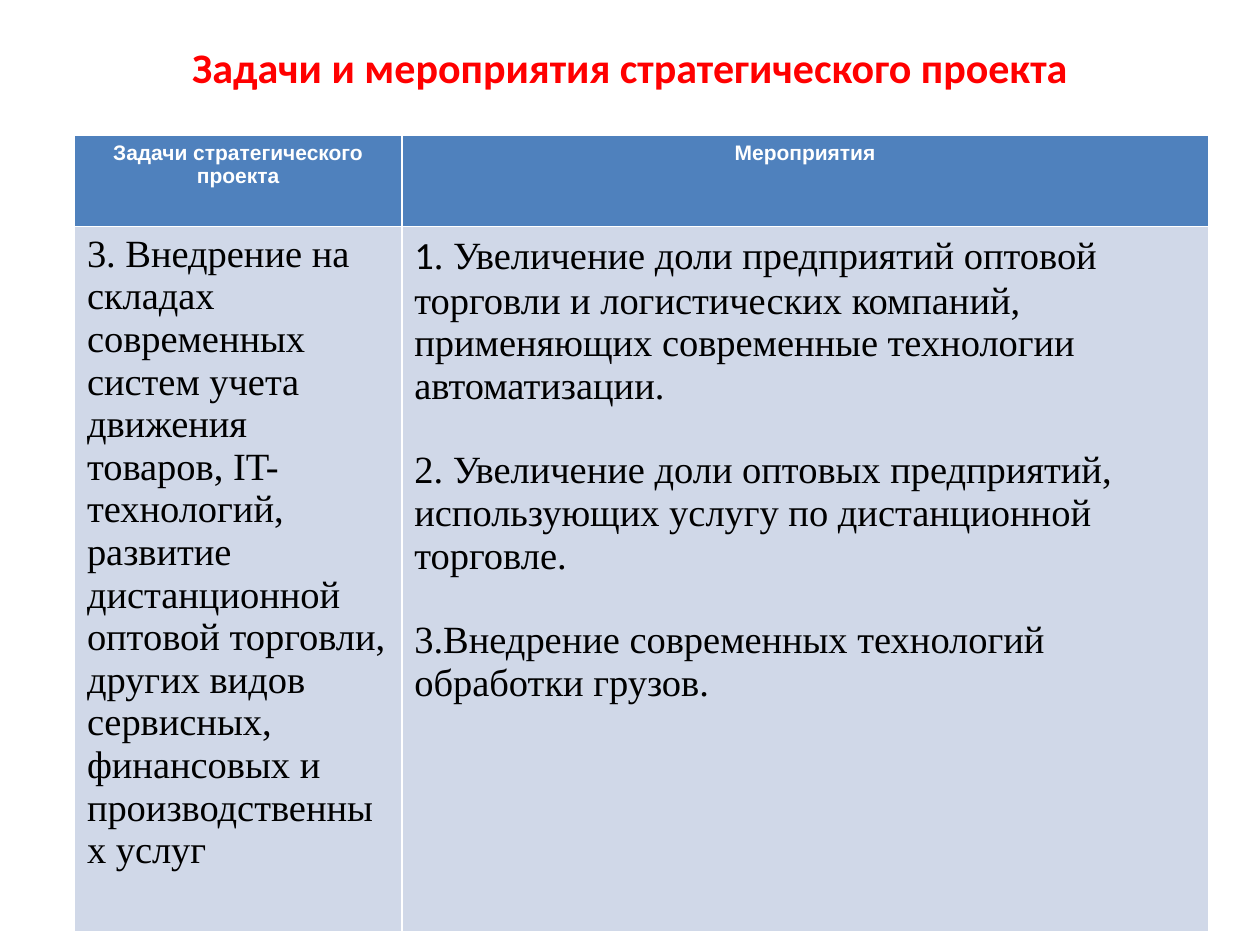
import pptx
import pptx.util
import pptx.dml.color
import pptx.enum.text

Cm = pptx.util.Cm
Pt = pptx.util.Pt
CENTER = pptx.enum.text.PP_ALIGN.CENTER
COLORS = {"title": "FF0000", "header": "4F81BD", "header_text": "FFFFFF",
          "body": "D0D8E8", "body_text": "000000"}


def rgb(name):
    return pptx.dml.color.RGBColor.from_string(COLORS[name])


def style(run, font, size, color, bold=False):
    run.font.name = font
    run.font.size = Pt(size)
    run.font.bold = bold
    run.font.color.rgb = rgb(color)


deck = pptx.Presentation()
deck.slide_width, deck.slide_height = Cm(25.4), Cm(19.05)
slide = deck.slides.add_slide(deck.slide_layouts[6])

# Title
title = slide.shapes.add_textbox(Cm(1.27), Cm(0.76), Cm(22.86), Cm(1.17)).text_frame
title.word_wrap = True
title.vertical_anchor = pptx.enum.text.MSO_ANCHOR.MIDDLE
title.text = "Задачи и мероприятия стратегического проекта"
title.paragraphs[0].alignment = CENTER
style(title.paragraphs[0].runs[0], "Calibri", 24, "title", True)

# Table of tasks and measures; the default style draws the white borders
table = slide.shapes.add_table(2, 2, Cm(1.5), Cm(2.72), Cm(22.86), Cm(15.3)).table
for column, width in zip(table.columns, (6.6, 16.26)):
    column.width = Cm(width)
for row, height in zip(table.rows, (1.85, 13.46)):
    row.height = Cm(height)

# Header row
for column, heading in enumerate(("Задачи стратегического проекта", "Мероприятия")):
    cell = table.cell(0, column)
    cell.fill.solid()
    cell.fill.fore_color.rgb = rgb("header")
    cell.text_frame.text = heading
    paragraph = cell.text_frame.paragraphs[0]
    paragraph.alignment = CENTER
    style(paragraph.runs[0], "Arial", 12, "header_text", True)

# Body row: one list of paragraphs per cell, each a list of runs
task = [["3. Внедрение на складах современных систем учета движения товаров, "
         "IT-технологий, развитие дистанционной оптовой торговли, других видов "
         "сервисных, финансовых и производственных услуг"]]
measures = [
    ["1", ". Увеличение доли предприятий оптовой торговли и логистических "
          "компаний, применяющих современные технологии автоматизации."],
    ["2. Увеличение доли оптовых предприятий, использующих услугу по "
     "дистанционной торговле."],
    ["3.Внедрение современных технологий обработки грузов."],
]
for column, paragraphs in enumerate((task, measures)):
    cell = table.cell(1, column)
    cell.fill.solid()
    cell.fill.fore_color.rgb = rgb("body")
    for index, pieces in enumerate(paragraphs):
        frame = cell.text_frame
        paragraph = frame.add_paragraph() if index else frame.paragraphs[0]
        if index:
            paragraph.space_before = Pt(24)
        for piece in pieces:
            run = paragraph.add_run()
            run.text = piece
            font = "Calibri" if piece == "1" else "Times New Roman"
            style(run, font, 22, "body_text")

deck.save("out.pptx")
